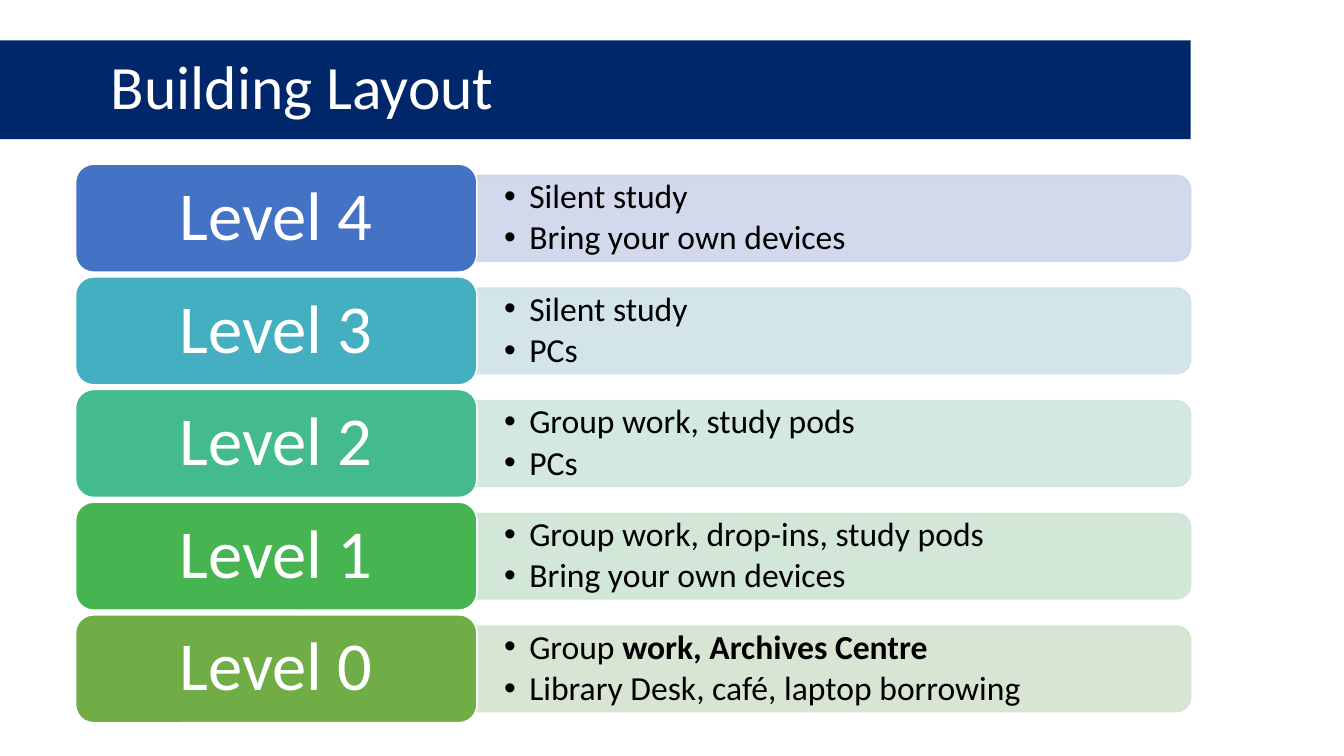
from lxml import etree
from pptx import Presentation
from pptx.dml.color import RGBColor
from pptx.enum.shapes import MSO_SHAPE
from pptx.enum.text import MSO_ANCHOR, MSO_AUTO_SIZE, PP_ALIGN
from pptx.oxml.ns import qn
from pptx.util import Inches, Pt

ROUNDED = MSO_SHAPE.ROUNDED_RECTANGLE
ROUNDED_TOP = MSO_SHAPE.ROUND_2_SAME_RECTANGLE
MIDDLE = MSO_ANCHOR.MIDDLE
LEFT, CENTER = PP_ALIGN.LEFT, PP_ALIGN.CENTER
NO_AUTOFIT = MSO_AUTO_SIZE.NONE

FONT = "Calibri"
WHITE, BLACK, NAVY = "FFFFFF", "000000", "00276A"
TITLE_ONLY = 5

# Row geometry in inches
FIRST_TOP, ROW_PITCH = 1.63, 1.1175
LABEL_LEFT, LABEL_WIDTH, LABEL_HEIGHT = 0.75, 3.98, 1.07
PANEL_LEFT = LABEL_LEFT + LABEL_WIDTH
PANEL_WIDTH, PANEL_HEIGHT = 7.08, 0.85
LIST_WIDTH, LIST_HEIGHT = 7.04, 0.77

# Label, label colour, panel colour, bullets as lists of (text, bold) runs
LEVELS = [
    ("Level 4", "4472C4", "CFD5EA",
     [[("Silent study", False)], [("Bring your own devices", False)]]),
    ("Level 3", "43AFC0", "CFE2E8",
     [[("Silent study", False)], [("PCs", False)]]),
    ("Level 2", "43BB8D", "CFE6E0",
     [[("Group work, study pods", False)], [("PCs", False)]]),
    ("Level 1", "45B451", "CFE5D4",
     [[("Group work, drop-ins, study pods", False)],
      [("Bring your own devices", False)]]),
    ("Level 0", "70AD47", "D5E3CF",
     [[("Group ", False), ("work, Archives Centre", True)],
      [("Library Desk, café, laptop borrowing", False)]]),
]


def rgb(hex_color):
    return RGBColor.from_string(hex_color)


def paint(shape, fill, line=None):
    shape.fill.solid()
    shape.fill.fore_color.rgb = rgb(fill)
    if line:
        shape.line.color.rgb = rgb(line)
        shape.line.width = Pt(1)
    else:
        shape.line.fill.background()
    shape.shadow.inherit = False


def make_translucent(shape, percent):
    for color in shape.element.spPr.iter(qn("a:srgbClr")):
        etree.SubElement(color, qn("a:alpha"), val=str(percent * 1000))


def set_frame(frame, side, vertical):
    frame.word_wrap = True
    frame.auto_size = NO_AUTOFIT
    frame.vertical_anchor = MIDDLE
    frame.margin_left = frame.margin_right = Inches(side)
    frame.margin_top = frame.margin_bottom = Inches(vertical)


def add_span(para, text, size, color, bold=False):
    span = para.add_run()
    span.text = text
    span.font.name = FONT
    span.font.size = Pt(size)
    span.font.bold = bold
    span.font.color.rgb = rgb(color)


def add_bullet(para):
    properties = para._p.get_or_add_pPr()
    properties.set("marL", str(Inches(0.25)))
    properties.set("indent", str(Inches(-0.25)))
    etree.SubElement(properties, qn("a:buFont"), typeface="Arial")
    etree.SubElement(properties, qn("a:buChar"), char="•")


def add_title(page, text):
    title = page.shapes.title
    title.left, title.top = Inches(0), Inches(0.4)
    title.width, title.height = Inches(11.81), Inches(0.98)
    paint(title, NAVY)
    set_frame(title.text_frame, 0.1, 0.05)
    title.text_frame.margin_left = Inches(1.1)
    para = title.text_frame.paragraphs[0]
    para.alignment = LEFT
    para.line_spacing = 0.9
    add_span(para, text, 44, WHITE)


def add_panel(page, middle, color):
    # Turned a quarter, so that the rounded top faces right
    panel = page.shapes.add_shape(
        ROUNDED_TOP,
        Inches(PANEL_LEFT + (PANEL_WIDTH - PANEL_HEIGHT) / 2),
        Inches(middle - PANEL_WIDTH / 2),
        Inches(PANEL_HEIGHT), Inches(PANEL_WIDTH))
    panel.rotation = 90
    paint(panel, color, color)
    make_translucent(panel, 90)


def add_list(page, middle, bullets):
    box = page.shapes.add_textbox(
        Inches(PANEL_LEFT), Inches(middle - LIST_HEIGHT / 2),
        Inches(LIST_WIDTH), Inches(LIST_HEIGHT))
    frame = box.text_frame
    set_frame(frame, 0.27, 0.14)
    for index, spans in enumerate(bullets):
        para = frame.add_paragraph() if index else frame.paragraphs[0]
        para.line_spacing = 0.9
        para.space_after = Pt(3.6)
        add_bullet(para)
        for text, bold in spans:
            add_span(para, text, 24, BLACK, bold)


def add_label(page, top, text, color):
    label = page.shapes.add_shape(
        ROUNDED, Inches(LABEL_LEFT), Inches(top),
        Inches(LABEL_WIDTH), Inches(LABEL_HEIGHT))
    paint(label, color, WHITE)
    set_frame(label.text_frame, 0.2, 0.1)
    para = label.text_frame.paragraphs[0]
    para.alignment = CENTER
    para.line_spacing = 0.9
    add_span(para, text, 49, WHITE)


def main():
    deck = Presentation()
    deck.slide_width, deck.slide_height = Inches(13.33), Inches(7.5)
    page = deck.slides.add_slide(deck.slide_layouts[TITLE_ONLY])
    add_title(page, "Building Layout")

    # One row for each floor, top floor first
    for row, (name, color, panel_color, bullets) in enumerate(LEVELS):
        top = FIRST_TOP + row * ROW_PITCH
        middle = top + LABEL_HEIGHT / 2
        add_panel(page, middle, panel_color)
        add_list(page, middle, bullets)
        add_label(page, top, name, color)

    deck.save("out.pptx")


if __name__ == "__main__":
    main()
